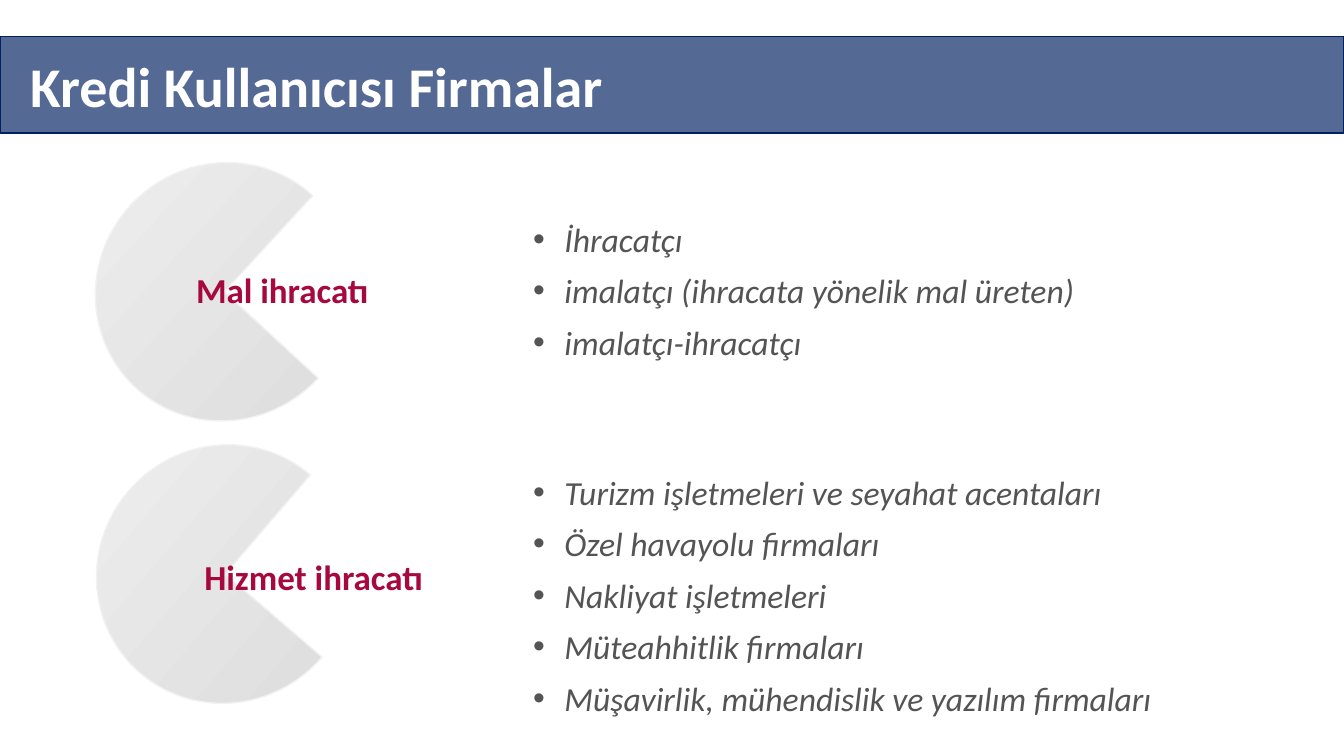
import pptx
import pptx.dml.color
import pptx.enum.shapes
import pptx.enum.text
import pptx.oxml
import pptx.oxml.ns
import pptx.util

RGBColor = pptx.dml.color.RGBColor
NAVY = RGBColor(0x00, 0x20, 0x60)
WHITE = RGBColor(0xFF, 0xFF, 0xFF)
WINE = RGBColor(0xA6, 0x09, 0x3D)
GREY = RGBColor(0x54, 0x54, 0x54)
DARK = RGBColor(0xD8, 0xD8, 0xD8)
LIGHT = RGBColor(0xF2, 0xF2, 0xF2)

WIDE, HIGH = 13.33, 7.5
LIST_X = 5.19
INDENT = 0.31
PIE_W, PIE_H = 2.53, 2.59

# pie (left, top, turn), label (top, width, text), list (top, width, height, items)
GROUPS = [
    ((0.96, 1.6, 42.6),
     (2.61, 3.3, "Mal ihracatı"),
     (2.12, 6.62, 1.55, [
         "İhracatçı",
         "imalatçı (ihracata yönelik mal üreten)",
         "imalatçı-ihracatçı"])),
    ((0.97, 4.4, 40.6),
     (5.46, 3.92, "Hizmet ihracatı"),
     (4.63, 6.51, 2.59, [
         "Turizm işletmeleri ve seyahat acentaları",
         "Özel havayolu firmaları",
         "Nakliyat işletmeleri",
         "Müteahhitlik firmaları",
         "Müşavirlik, mühendislik ve yazılım firmaları"])),
]


def inches(*sizes):
    return [pptx.util.Inches(size) for size in sizes]


def style(para, size, color, bold=False, slant=False):
    for run in para.runs:
        font = run.font
        font.name = "Calibri"
        font.size = pptx.util.Pt(size)
        font.bold, font.italic = bold, slant
        font.color.rgb = color


def add_title(slide, text):
    bar = slide.shapes.title
    bar.left, bar.top, bar.width, bar.height = inches(0, 0.36, WIDE, 0.96)
    bar.fill.solid()
    bar.fill.fore_color.rgb = NAVY
    tint = bar.fill._xPr.find(".//" + pptx.oxml.ns.qn("a:srgbClr"))
    tint.append(pptx.oxml.parse_xml(
        f'<a:alpha {pptx.oxml.ns.nsdecls("a")} val="67000"/>'))
    bar.line.color.rgb = NAVY
    bar.line.width = pptx.util.Pt(1)
    frame = bar.text_frame
    frame.text = text
    frame.auto_size = pptx.enum.text.MSO_AUTO_SIZE.NONE
    frame.margin_left = pptx.util.Inches(0.3)
    frame.vertical_anchor = pptx.enum.text.MSO_ANCHOR.MIDDLE
    para = frame.paragraphs[0]
    para.alignment = pptx.enum.text.PP_ALIGN.LEFT
    style(para, 40, WHITE, bold=True)


def add_pie(slide, left, top, turn):
    pie = slide.shapes.add_shape(
        pptx.enum.shapes.MSO_SHAPE.PIE, *inches(left, top, PIE_W, PIE_H))
    pie.rotation = turn
    pie.shadow.inherit = False
    pie.fill.gradient()
    pie.fill.gradient_angle = 180
    for stop, color in zip(pie.fill.gradient_stops, (DARK, LIGHT)):
        stop.color.rgb = color
    pie.line.color.rgb = LIGHT
    pie.line.width = pptx.util.Pt(1)


def add_text(slide, left, top, width, height):
    box = slide.shapes.add_textbox(*inches(left, top, width, height))
    box.text_frame.word_wrap = True
    return box.text_frame


def add_label(slide, top, width, text):
    frame = add_text(slide, 1.15, top, width, 0.52)
    frame.text = text
    para = frame.paragraphs[0]
    para.alignment = pptx.enum.text.PP_ALIGN.CENTER
    style(para, 25, WINE, bold=True)


def add_list(slide, top, width, height, items):
    frame = add_text(slide, LIST_X, top, width, height)
    frame.text = "\n".join(items)
    for rank, para in enumerate(frame.paragraphs):
        if rank:
            para.space_before = pptx.util.Pt(8)
        props = para._p.get_or_add_pPr()
        props.set("marL", str(pptx.util.Inches(INDENT)))
        props.set("indent", str(-pptx.util.Inches(INDENT)))
        for tag in ('buFont typeface="Arial"', 'buChar char="•"'):
            props.append(pptx.oxml.parse_xml(
                f'<a:{tag} {pptx.oxml.ns.nsdecls("a")}/>'))
        style(para, 24, GREY, slant=True)


def main():
    deck = pptx.Presentation()
    deck.slide_width, deck.slide_height = inches(WIDE, HIGH)
    slide = deck.slides.add_slide(deck.slide_layouts.get_by_name("Title Only"))
    add_title(slide, "Kredi Kullanıcısı Firmalar")
    for pie, label, items in GROUPS:
        add_pie(slide, *pie)
        add_label(slide, *label)
        add_list(slide, *items)
    deck.save("out.pptx")


if __name__ == "__main__":
    main()
